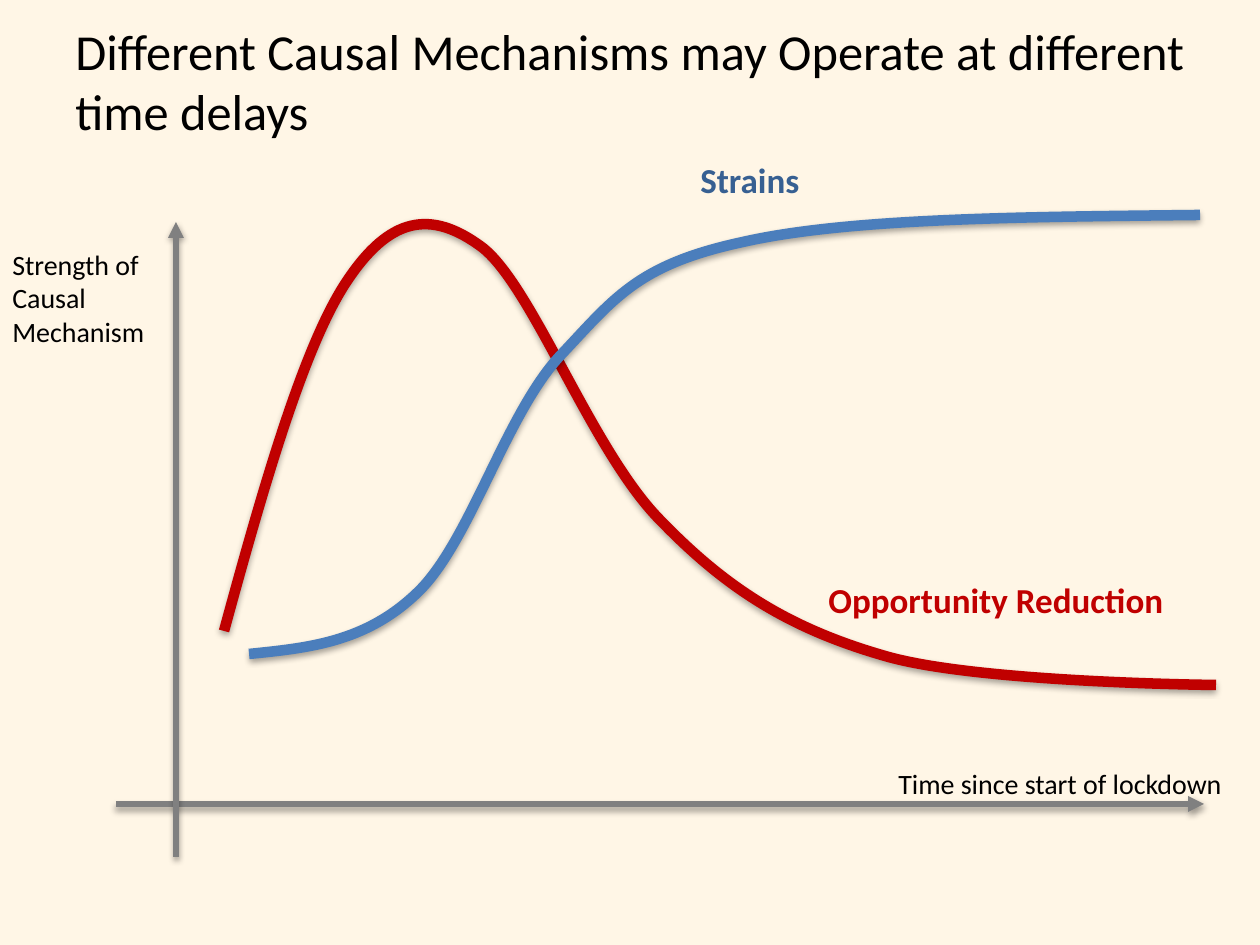
from lxml.etree import SubElement
from pptx import Presentation
from pptx.dml.color import RGBColor
from pptx.enum.shapes import MSO_CONNECTOR
from pptx.enum.text import MSO_ANCHOR, MSO_AUTO_SIZE
from pptx.oxml import parse_xml
from pptx.oxml.ns import nsdecls, qn
from pptx.util import Pt

PX = 7257.14
INK = {
    "paper": "FFF6E6",
    "text": "000000",
    "axis": "808080",
    "red": "C00000",
    "blue": "4B7EBC",
    "navy": "376092",
}
RED = [
    (224, 631), (263, 488), (304, 345), (347, 281),
    (389, 218), (430, 208), (483, 248),
    (534, 289), (593, 454), (662, 522),
    (728, 590), (791, 629), (885, 656),
    (977, 683), (1216, 685), (1216, 685),
]
BLUE = [
    (249, 654), (307, 648), (365, 643), (417, 593),
    (469, 544), (505, 416), (559, 357),
    (614, 299), (636, 265), (743, 242),
    (849, 218), (1024, 217), (1200, 215),
]


def emu(*nums):
    return [round(n * PX) for n in nums]


def tint(name):
    return RGBColor.from_string(INK[name])


class Sketch:
    face = "Calibri"

    def __init__(self, deck):
        self.slide = deck.slides.add_slide(deck.slide_layouts[6])
        fill = self.slide.background.fill
        fill.solid()
        fill.fore_color.rgb = tint("paper")

    def text(self, words, box, size, ink="text", **extra):
        shape = self.slide.shapes.add_textbox(*emu(*box))
        frame = shape.text_frame
        form = {"word_wrap": True, "auto_size": MSO_AUTO_SIZE.NONE, **extra}
        bold = form.pop("bold", False)
        for key, val in form.items():
            setattr(frame, key, val)
        run = frame.paragraphs[0].add_run()
        run.text = words
        look = {"name": self.face, "size": Pt(size), "bold": bold}
        for key, val in look.items():
            setattr(run.font, key, val)
        run.font.color.rgb = tint(ink)

    def stroke(self, shape, ink, width, drop, alpha):
        shape.line.color.rgb = tint(ink)
        shape.line.width = Pt(width)
        shape._element.spPr.append(parse_xml(
            f'<a:effectLst {nsdecls("a")}>'
            f'<a:outerShdw blurRad="40000" dist="{drop}" dir="5400000" rotWithShape="0">'
            f'<a:srgbClr val="000000"><a:alpha val="{alpha}000"/></a:srgbClr>'
            '</a:outerShdw></a:effectLst>'))

    def axis(self, start, end):
        line = self.slide.shapes.add_connector(
            MSO_CONNECTOR.STRAIGHT, *emu(*start, *end))
        self.stroke(line, "axis", 3, 20000, 38)
        SubElement(line.line._get_or_add_ln(), qn("a:tailEnd"), type="triangle")

    def curve(self, dots, ink):
        pen = self.slide.shapes.build_freeform(*dots[0], scale=PX)
        pen.add_line_segments(dots[1:], close=False)
        shape = pen.convert_to_shape()
        shape.fill.background()
        self.stroke(shape, ink, 6, 23000, 35)
        track = next(shape._element.iter(qn("a:path")))
        legs = track.findall(qn("a:lnTo"))
        for n in range(0, len(legs), 3):
            bend = SubElement(track, qn("a:cubicBezTo"))
            for leg in legs[n:n + 3]:
                bend.append(leg[0])
                track.remove(leg)


def main():
    deck = Presentation()
    deck.slide_width, deck.slide_height = emu(1260, 945)
    art = Sketch(deck)
    grow = {"auto_size": MSO_AUTO_SIZE.SHAPE_TO_FIT_TEXT}
    tag = {**grow, "word_wrap": False}
    art.text("Different Causal Mechanisms may Operate at different time delays",
             (63, 30, 1176, 101), 28.8, vertical_anchor=MSO_ANCHOR.MIDDLE)
    art.axis((116, 804), (1204, 804))
    art.axis((176, 857), (176, 222))
    art.curve(RED, "red")
    art.text("Time since start of lockdown", (886, 760, 353, 47), 16, **tag)
    art.text("Strength of Causal Mechanism", (0, 241, 176, 115), 16, **grow)
    art.curve(BLUE, "blue")
    art.text("Opportunity Reduction", (816, 572, 363, 55), 20, "red", bold=True, **tag)
    art.text("Strains", (688, 152, 126, 55), 20, "navy", bold=True, **tag)
    deck.save("out.pptx")


if __name__ == "__main__":
    main()
